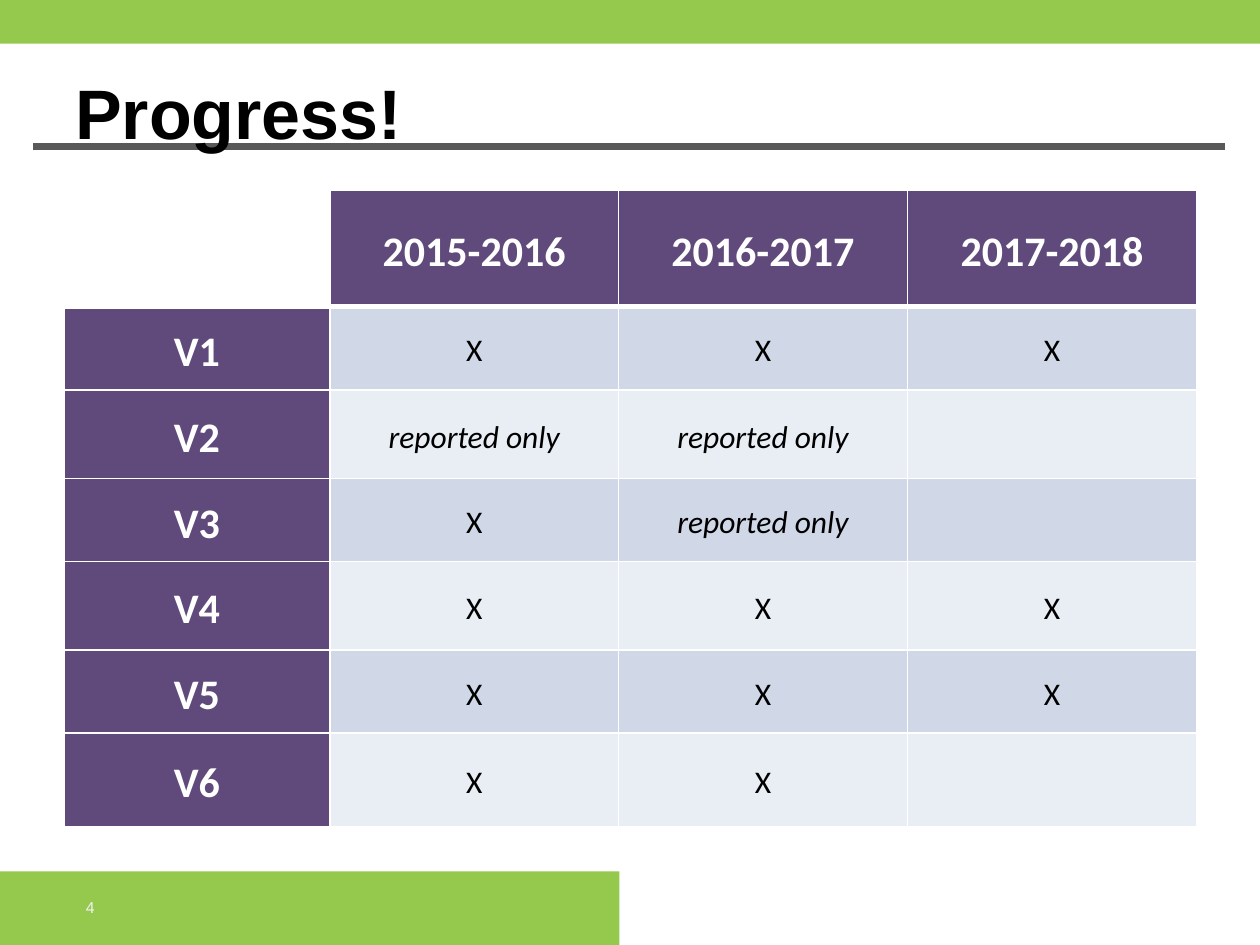
"""Builds the progress slide with its table of yearly reports."""
from dataclasses import dataclass

from lxml.etree import SubElement
from pptx import Presentation
from pptx.dml.color import RGBColor
from pptx.enum.shapes import MSO_CONNECTOR as Link, MSO_SHAPE as Shape
from pptx.enum.text import MSO_ANCHOR as Anchor, PP_ALIGN as Align
from pptx.oxml import parse_xml
from pptx.oxml.ns import nsdecls, qn
from pptx.util import Pt

GREEN, PURPLE, WHITE, BLACK = "95C94E", "604A7B", "FFFFFF", "000000"
BANDS = ("D0D8E8", "E9EDF4")
NOTE = "reported only"


@dataclass
class Box:
    left: float
    top: float
    width: float
    height: float

    def area(self) -> list:
        return [Pt(n) for n in (self.left, self.top, self.width, self.height)]


@dataclass
class Style:
    size: float
    color: str
    bold: bool = False
    italic: bool = False
    face: str = "Calibri"


HEAD = Style(24, WHITE, bold=True)
MARK = Style(18, BLACK)
REMARK = Style(18, BLACK, italic=True)

BARS = [Box(0, 498, 354, 42), Box(-1, 0, 722, 25)]
COLS = (152, 165, 165, 165.5)
ROWS = (66.5, 48, 50.5, 47.5, 50.5, 47.5, 53.5)
DATA = (
    ("", "2015-2016", "2016-2017", "2017-2018"),
    ("V1", "X", "X", "X"),
    ("V2", NOTE, NOTE, ""),
    ("V3", "X", NOTE, ""),
    ("V4", "X", "X", "X"),
    ("V5", "X", "X", "X"),
    ("V6", "X", "X", ""),
)


def tint(code: str) -> RGBColor:
    return RGBColor.from_string(code)


def write(frame, text: str, style: Style) -> None:
    frame.text = text
    for run in frame.paragraphs[0].runs:
        font = run.font
        font.name, font.size = style.face, Pt(style.size)
        font.bold, font.italic = style.bold, style.italic
        font.color.rgb = tint(style.color)


def add_bar(slide, box: Box) -> None:
    bar = slide.shapes.add_shape(Shape.RECTANGLE, *box.area())
    bar.shadow.inherit = False
    bar.fill.solid()
    bar.fill.fore_color.rgb = tint(GREEN)
    bar.line.fill.background()


def add_rule(slide) -> None:
    rule = slide.shapes.add_connector(
        Link.STRAIGHT, Pt(19), Pt(83.5), Pt(700), Pt(83.5))
    rule.line.color.rgb = tint("595959")
    rule.line.width = Pt(4)
    SubElement(rule._element.spPr, qn("a:effectLst"))


def add_text(slide, box: Box, text: str, style: Style, anchor: Anchor) -> None:
    frame = slide.shapes.add_textbox(*box.area()).text_frame
    frame.word_wrap = True
    frame.vertical_anchor = anchor
    write(frame, text, style)


def add_edges(cell, top: float, bottom: float) -> None:
    props = cell._tc.get_or_add_tcPr()
    sides = {"L": 1, "R": 1, "T": top, "B": bottom}
    for spot, (side, width) in enumerate(sides.items()):
        props.insert(spot, parse_xml(
            f'<a:ln{side} {nsdecls("a")} w="{Pt(width)}"><a:solidFill>'
            f'<a:srgbClr val="{WHITE}"/></a:solidFill></a:ln{side}>'))


def fill_cell(cell, row: int, col: int, text: str) -> None:
    edge = row == 0 or col == 0
    if row == col == 0:
        cell.fill.background()
    else:
        cell.fill.solid()
        cell.fill.fore_color.rgb = tint(PURPLE if edge else BANDS[(row - 1) % 2])
    cell.margin_left = cell.margin_right = Pt(5)
    cell.margin_top = cell.margin_bottom = Pt(0)
    cell.vertical_anchor = Anchor.MIDDLE
    write(cell.text_frame, text, HEAD if edge else REMARK if text == NOTE else MARK)
    line = cell.text_frame.paragraphs[0]
    line.alignment, line.line_spacing = Align.CENTER, 1.15
    add_edges(cell, 3 if row == 1 else 1, 3 if row == 0 else 1)


def add_grid(slide) -> None:
    box = Box(36.5, 108.5, sum(COLS), sum(ROWS))
    grid = slide.shapes.add_table(len(ROWS), len(COLS), *box.area()).table
    grid.first_row = grid.horz_banding = False
    for col, width in zip(grid.columns, COLS):
        col.width = Pt(width)
    for row, height in zip(grid.rows, ROWS):
        row.height = Pt(height)
    for row, texts in enumerate(DATA):
        for col, text in enumerate(texts):
            fill_cell(grid.cell(row, col), row, col, text)


def main() -> None:
    deck = Presentation()
    deck.slide_width, deck.slide_height = Pt(720), Pt(540)
    slide = deck.slides.add_slide(deck.slide_layouts[6])
    for bar in BARS:
        add_bar(slide, bar)
    add_rule(slide)
    add_text(slide, Box(36, 36, 673, 51), "Progress!",
             Style(40, BLACK, bold=True, face="Arial"), Anchor.TOP)
    add_grid(slide)
    add_text(slide, Box(42, 504, 168, 29), "4",
             Style(9, "F2F2F2", face="Arial"), Anchor.MIDDLE)
    deck.save("out.pptx")


if __name__ == "__main__":
    main()
